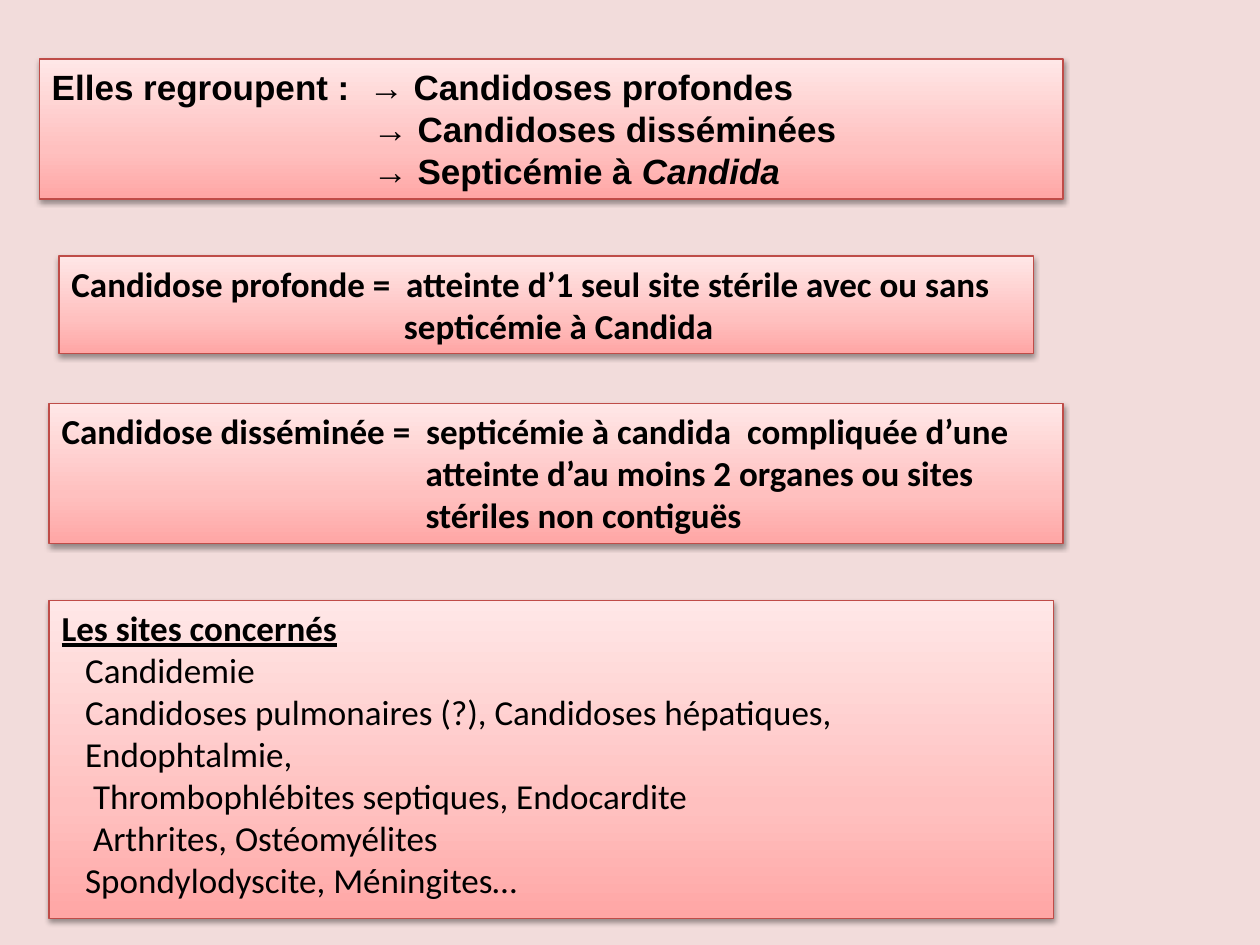
"""Build a slide of four shaded panels defining the forms of deep candidosis."""
from dataclasses import dataclass

import lxml.etree
import pptx
import pptx.dml.color
import pptx.enum.shapes
import pptx.enum.text
import pptx.oxml
import pptx.oxml.ns
import pptx.util

Pt = pptx.util.Pt
NAMESPACE = pptx.oxml.ns.nsdecls("a")
GRADIENT = [(0, "FFA6A5"), (35, "FFC0BF"), (100, "FFE7E7")]


@dataclass(frozen=True)
class Span:
    text: str
    bold: bool = True
    italic: bool = False
    underline: bool = False


@dataclass(frozen=True)
class Line:
    spans: tuple[Span, ...]
    indent: float = 0


@dataclass(frozen=True)
class Panel:
    left: float
    top: float
    width: float
    height: float
    font: str
    lines: tuple[Line, ...]


def line(text: str, indent: float = 0, bold: bool = True) -> Line:
    return Line((Span(text, bold),), indent)


def colour(value: str) -> pptx.dml.color.RGBColor:
    return pptx.dml.color.RGBColor.from_string(value)


def shade(box) -> None:
    stops = "".join(
        f'<a:gs pos="{position * 1000}"><a:srgbClr val="{value}"/></a:gs>'
        for position, value in GRADIENT
    )
    box.fill.gradient()
    box.fill.gradient_angle = 90
    stop_list = box._element.spPr.find(".//" + pptx.oxml.ns.qn("a:gsLst"))
    stop_list[:] = list(pptx.oxml.parse_xml(f"<a:gsLst {NAMESPACE}>{stops}</a:gsLst>"))


def cast_shadow(box) -> None:
    box.shadow.inherit = False
    effects = box._element.spPr.find(pptx.oxml.ns.qn("a:effectLst"))
    effects.append(pptx.oxml.parse_xml(
        f'<a:outerShdw {NAMESPACE} blurRad="{Pt(3.1)}" dist="{Pt(1.6)}" dir="5400000" '
        'rotWithShape="0"><a:srgbClr val="000000"><a:alpha val="38000"/></a:srgbClr></a:outerShdw>'
    ))


def draw_panel(page, panel: Panel) -> None:
    box = page.shapes.add_shape(
        pptx.enum.shapes.MSO_SHAPE.RECTANGLE,
        Pt(panel.left), Pt(panel.top), Pt(panel.width), Pt(panel.height),
    )
    shade(box)
    box.line.color.rgb = colour("BF4C48")
    box.line.width = Pt(0.75)
    cast_shadow(box)
    frame = box.text_frame
    frame.word_wrap = True
    frame.auto_size = pptx.enum.text.MSO_AUTO_SIZE.SHAPE_TO_FIT_TEXT
    frame.vertical_anchor = pptx.enum.text.MSO_ANCHOR.TOP
    for index, entry in enumerate(panel.lines):
        para = frame.add_paragraph() if index else frame.paragraphs[0]
        para.alignment = pptx.enum.text.PP_ALIGN.LEFT
        properties = para._p.get_or_add_pPr()
        properties.set("marL", str(Pt(entry.indent)))
        properties.set("indent", "0")
        for part in entry.spans:
            span = para.add_run()
            span.text = part.text
            span.font.name = panel.font
            span.font.size = Pt(20)
            span.font.bold = part.bold
            span.font.italic = part.italic
            span.font.underline = part.underline
            span.font.color.rgb = colour("000000")


PANELS = [
    Panel(22.5, 33.75, 585, 80, "Arial", (
        line("Elles regroupent\u00a0:  → Candidoses profondes"),
        line("→ Candidoses disséminées", 183.5),
        Line((Span("→ Septicémie à "), Span("Candida", italic=True)), 183.5),
    )),
    Panel(28.1, 230.6, 579.4, 80, "Calibri", (
        line("Candidose disséminée\u00a0=  septicémie à candida  compliquée d’une"),
        line("atteinte d’au moins 2 organes ou sites", 208),
        line("stériles non contiguës", 208),
    )),
    Panel(28.1, 343.1, 573.8, 181.7, "Calibri", (
        Line((Span("Les sites concernés", underline=True),)),
        line("Candidemie", 13.5, False),
        line("Candidoses pulmonaires (?), Candidoses hépatiques,", 13.5, False),
        line("Endophtalmie,", 13.5, False),
        line("Thrombophlébites septiques, Endocardite", 18, False),
        line("Arthrites, Ostéomyélites", 18, False),
        line("Spondylodyscite, Méningites…", 13.5, False),
    )),
    Panel(33.75, 146.25, 556.9, 55.7, "Calibri", (
        line("Candidose profonde =  atteinte d’1 seul site stérile avec ou sans"),
        line("septicémie à Candida", 190),
    )),
]


def main() -> None:
    deck = pptx.Presentation()
    deck.slide_width, deck.slide_height = Pt(720), Pt(540)
    page = deck.slides.add_slide(deck.slide_layouts[6])
    page.background.fill.solid()
    page.background.fill.fore_color.rgb = colour("F2DCDB")
    for panel in PANELS:
        draw_panel(page, panel)
    deck.save("out.pptx")


if __name__ == "__main__":
    main()
